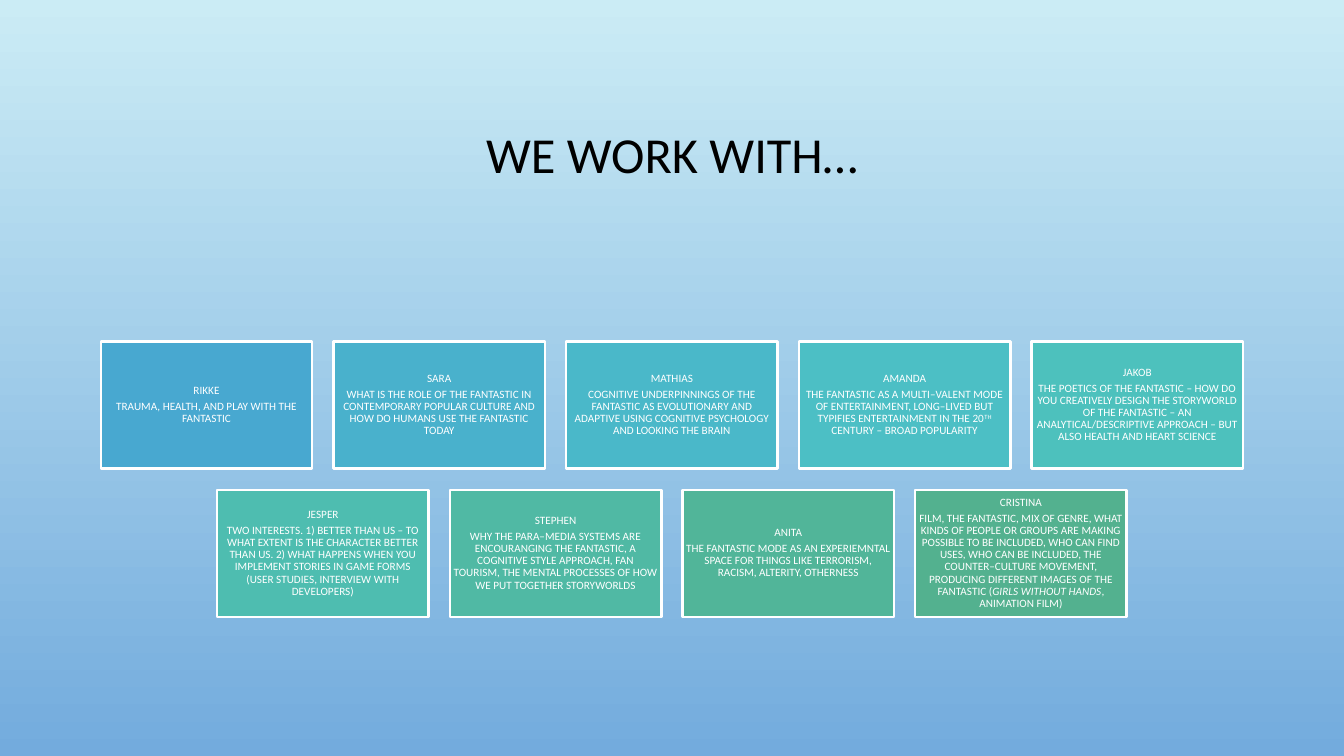
from dataclasses import dataclass

import pptx
import pptx.dml.color
import pptx.enum.shapes
import pptx.enum.text
import pptx.slide
import pptx.text.text
import pptx.util

Pt = pptx.util.Pt

SLIDE_WIDTH, SLIDE_HEIGHT = 960, 540
MARGIN = 72
CARDS_PER_ROW = 5
CARD_WIDTH, CARD_HEIGHT = 151.1, 90.67
CARD_GAP = 15.12
CARDS_TOP = 244.1

CENTERED = {
    "alignment": pptx.enum.text.PP_ALIGN.CENTER,
    "line_spacing": 0.9,
}
CARD_PARAGRAPH = CENTERED | {"space_after": Pt(2.8)}
TITLE_FRAME = {
    "word_wrap": True,
    "vertical_anchor": pptx.enum.text.MSO_ANCHOR.MIDDLE,
}
CARD_FRAME = TITLE_FRAME | {
    f"margin_{side}": Pt(2.4) for side in ("left", "right", "top", "bottom")
}


@dataclass
class TextRun:
    text: str
    italic: bool = False
    superscript: bool = False


@dataclass
class Card:
    name: str
    fill: str
    topic: list[TextRun]


CARDS = [
    Card("RIKKE", "48A8D0", [TextRun("TRAUMA, HEALTH, AND PLAY WITH THE FANTASTIC")]),
    Card("SARA", "49B1CC", [TextRun(
        "WHAT IS THE ROLE OF THE FANTASTIC IN CONTEMPORARY POPULAR CULTURE "
        "AND HOW DO HUMANS USE THE FANTASTIC TODAY")]),
    Card("MATHIAS", "4AB8C9", [TextRun(
        "COGNITIVE UNDERPINNINGS OF THE FANTASTIC AS EVOLUTIONARY AND "
        "ADAPTIVE USING COGNITIVE PSYCHOLOGY AND LOOKING THE BRAIN")]),
    Card("AMANDA", "4CBFC5", [
        TextRun("THE FANTASTIC AS A MULTI–VALENT MODE OF ENTERTAINMENT, "
                "LONG–LIVED BUT TYPIFIES ENTERTAINMENT IN THE 20"),
        TextRun("TH", superscript=True),
        TextRun(" CENTURY – BROAD POPULARITY")]),
    Card("JAKOB", "4DC1BD", [TextRun(
        "THE POETICS OF THE FANTASTIC – HOW DO YOU CREATIVELY DESIGN THE "
        "STORYWORLD OF THE FANTASTIC – AN ANALYTICAL/DESCRIPTIVE APPROACH – "
        "BUT ALSO HEALTH AND HEART SCIENCE")]),
    Card("JESPER", "4EBDB0", [TextRun(
        "TWO INTERESTS. 1) BETTER THAN US – TO WHAT EXTENT IS THE CHARACTER "
        "BETTER THAN US. 2) WHAT HAPPENS WHEN YOU IMPLEMENT STORIES IN GAME "
        "FORMS (USER STUDIES, INTERVIEW WITH DEVELOPERS)")]),
    Card("STEPHEN", "50B9A4", [TextRun(
        "WHY THE PARA–MEDIA SYSTEMS ARE ENCOURANGING THE FANTASTIC, A "
        "COGNITIVE STYLE APPROACH, FAN TOURISM, THE MENTAL PROCESSES OF HOW "
        "WE PUT TOGETHER STORYWORLDS")]),
    Card("ANITA", "51B599", [TextRun(
        "THE FANTASTIC MODE AS AN EXPERIEMNTAL SPACE FOR THINGS LIKE "
        "TERRORISM, RACISM, ALTERITY, OTHERNESS")]),
    Card("CRISTINA", "53B18F", [
        TextRun("FILM, THE FANTASTIC, MIX OF GENRE, WHAT KINDS OF PEOPLE OR "
                "GROUPS ARE MAKING POSSIBLE TO BE INCLUDED, WHO CAN FIND USES, "
                "WHO CAN BE INCLUDED, THE COUNTER–CULTURE MOVEMENT, PRODUCING "
                "DIFFERENT IMAGES OF THE FANTASTIC ("),
        TextRun("GIRLS WITHOUT HANDS", italic=True),
        TextRun(", ANIMATION FILM)")]),
]


def color(value: str) -> pptx.dml.color.RGBColor:
    return pptx.dml.color.RGBColor.from_string(value)


def apply_format(target: object, values: dict[str, object]) -> None:
    for name, value in values.items():
        setattr(target, name, value)


def write_paragraph(paragraph: pptx.text.text._Paragraph, runs: list[TextRun],
                    size: float, text_color: str, values: dict[str, object]) -> None:
    apply_format(paragraph, values)
    for text_run in runs:
        run = paragraph.add_run()
        run.text = text_run.text
        apply_format(run.font, {"name": "Calibri", "size": Pt(size)})
        run.font.color.rgb = color(text_color)
        if text_run.italic:
            run.font.italic = True
        if text_run.superscript:
            run._r.get_or_add_rPr().set("baseline", "30000")


def paint_background(slide: pptx.slide.Slide) -> None:
    fill = slide.background.fill
    fill.gradient()
    fill.gradient_angle = 270
    for stop, value in zip(fill.gradient_stops, ("CBECF5", "73ABDD")):
        stop.color.rgb = color(value)


def add_title(slide: pptx.slide.Slide, text: str) -> None:
    box = slide.shapes.add_textbox(
        Pt(MARGIN), Pt(49), Pt(SLIDE_WIDTH - 2 * MARGIN), Pt(126))
    apply_format(box.text_frame, TITLE_FRAME)
    write_paragraph(box.text_frame.paragraphs[0], [TextRun(text)], 36, "000000", CENTERED)


def add_card(slide: pptx.slide.Slide, card: Card, left: float, top: float) -> None:
    shape = slide.shapes.add_shape(
        pptx.enum.shapes.MSO_SHAPE.RECTANGLE,
        Pt(left), Pt(top), Pt(CARD_WIDTH), Pt(CARD_HEIGHT))
    shape.shadow.inherit = False
    shape.fill.solid()
    shape.fill.fore_color.rgb = color(card.fill)
    shape.line.color.rgb = color("FFFFFF")
    shape.line.width = Pt(1.75)
    frame = shape.text_frame
    apply_format(frame, CARD_FRAME)
    write_paragraph(frame.paragraphs[0], [TextRun(card.name)], 8, "FFFFFF", CARD_PARAGRAPH)
    write_paragraph(frame.add_paragraph(), card.topic, 8, "FFFFFF", CARD_PARAGRAPH)


def add_card_rows(slide: pptx.slide.Slide, cards: list[Card]) -> None:
    """Lay the cards out in rows, each row centred on the slide."""
    for row, start in enumerate(range(0, len(cards), CARDS_PER_ROW)):
        row_cards = cards[start:start + CARDS_PER_ROW]
        row_width = len(row_cards) * (CARD_WIDTH + CARD_GAP) - CARD_GAP
        row_left = (SLIDE_WIDTH - row_width) / 2
        top = CARDS_TOP + row * (CARD_HEIGHT + CARD_GAP)
        for column, card in enumerate(row_cards):
            add_card(slide, card, row_left + column * (CARD_WIDTH + CARD_GAP), top)


def main() -> None:
    presentation = pptx.Presentation()
    presentation.slide_width = Pt(SLIDE_WIDTH)
    presentation.slide_height = Pt(SLIDE_HEIGHT)
    slide = presentation.slides.add_slide(presentation.slide_layouts[6])
    paint_background(slide)
    add_title(slide, "WE WORK WITH…")
    add_card_rows(slide, CARDS)
    presentation.save("out.pptx")


if __name__ == "__main__":
    main()
